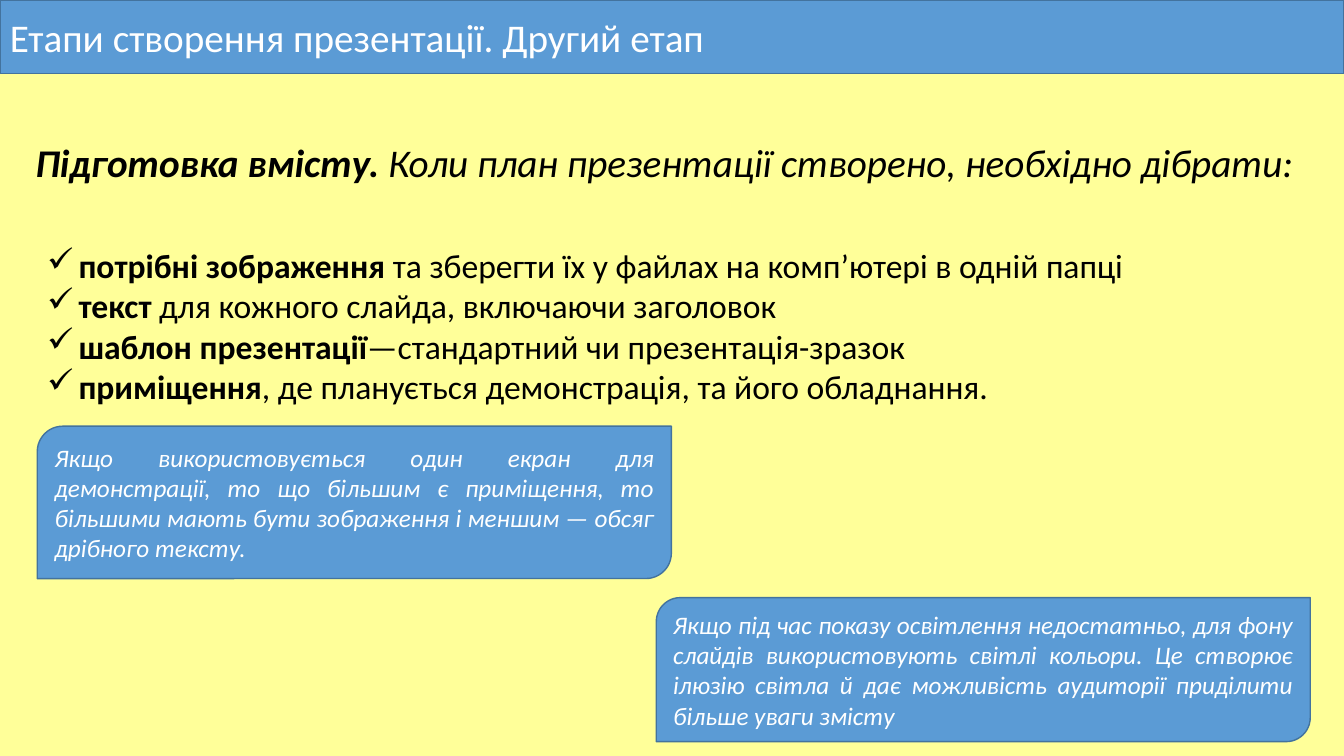
import pptx
import pptx.dml.color
import pptx.enum.shapes
import pptx.enum.text
import pptx.oxml.ns
import pptx.util
import lxml.etree

Cm = pptx.util.Cm
Pt = pptx.util.Pt
Align = pptx.enum.text.PP_ALIGN
Anchor = pptx.enum.text.MSO_ANCHOR
Kind = pptx.enum.shapes.MSO_SHAPE

BLUE, EDGE, CREAM, WHITE, BLACK = "5B9BD5", "43739E", "FFFF99", "FFFFFF", "000000"
HEAD = {"size": Pt(28), "name": "Calibri"}
LEAD = {**HEAD, "italic": True}
ITEM = {"size": Pt(24), "name": "Calibri"}
NOTE = {"size": Pt(18), "name": "Calibri", "italic": True}

ITEMS = [
    ("потрібні зображення ", "та зберегти їх у файлах на комп’ютері в одній папці"),
    ("текст", " для кожного слайда, включаючи заголовок"),
    ("шаблон презентації", "—стандартний чи презентація-зразок"),
    ("приміщення", ", де планується демонстрація, та його обладнання."),
]
NOTES = [
    ((0.94, 10.74, 15.98, 3.84),
     "Якщо використовується один екран для демонстрації, то що більшим є "
     "приміщення, то більшими мають бути зображення і меншим — обсяг дрібного тексту."),
    ((16.54, 15.06, 16.48, 3.63),
     "Якщо під час показу освітлення недостатньо, для фону слайдів використовують "
     "світлі кольори. Це створює ілюзію світла й дає можливість аудиторії "
     "приділити більше уваги змісту"),
]


def apply(item, form):
    """Set every attribute named in the format dict."""
    for key, value in form.items():
        setattr(item, key, value)


def paint(fmt, tone):
    """Give a fill a solid colour from a hex string."""
    fmt.solid()
    fmt.fore_color.rgb = pptx.dml.color.RGBColor.from_string(tone)


def write(para, text, form, tone, bold=False):
    """Add one formatted run to a paragraph."""
    run = para.add_run()
    run.text = text
    apply(run.font, {**form, "bold": bold})
    paint(run.font.fill, tone)


def add_panel(slide, kind, box, text, form, align):
    """Add a blue shape holding one white paragraph."""
    panel = slide.shapes.add_shape(kind, *map(Cm, box))
    panel.shadow.inherit = False
    paint(panel.fill, BLUE)
    paint(panel.line.fill, EDGE)
    panel.line.width = Pt(1)
    apply(panel.text_frame, {"word_wrap": True, "vertical_anchor": Anchor.MIDDLE})
    para = panel.text_frame.paragraphs[0]
    para.alignment = align
    write(para, text, form, WHITE)


def add_text(slide, box, rows, form, anchor):
    """Add a text box of bold and plain pairs and return its paragraphs."""
    frame = slide.shapes.add_textbox(*map(Cm, box)).text_frame
    apply(frame, {"word_wrap": True, "vertical_anchor": anchor})
    for index, (key, rest) in enumerate(rows):
        para = frame.add_paragraph() if index else frame.paragraphs[0]
        write(para, key, form, BLACK, True)
        write(para, rest, form, BLACK)
    return frame.paragraphs


def add_tick(para):
    """Give a paragraph a tick bullet with a hanging indent."""
    props = para._p.get_or_add_pPr()
    props.set("marL", str(Cm(0.79)))
    props.set("indent", str(-Cm(0.79)))
    tick = lxml.etree.SubElement(props, pptx.oxml.ns.qn("a:buChar"))
    tick.set("char", "✓")


def main():
    """Build the slide and save it."""
    deck = pptx.Presentation()
    apply(deck, {"slide_width": Cm(33.87), "slide_height": Cm(19.05)})
    slide = deck.slides.add_slide(deck.slide_layouts[6])
    paint(slide.background.fill, CREAM)

    add_panel(slide, Kind.RECTANGLE, (0, 0, 33.87, 1.85),
              "Етапи створення презентації. Другий етап", HEAD, Align.LEFT)
    lead = [("Підготовка вмісту. ", "Коли план презентації створено, необхідно дібрати:")]
    for para in add_text(slide, (0.64, 2.59, 32.59, 3.12), lead, LEAD, Anchor.MIDDLE):
        apply(para, {"alignment": Align.JUSTIFY, "line_spacing": 0.9})
    for para in add_text(slide, (0.94, 6.05, 30.3, 4.37), ITEMS, ITEM, Anchor.TOP):
        add_tick(para)
    for box, text in NOTES:
        add_panel(slide, Kind.ROUND_2_DIAG_RECTANGLE, box, text, NOTE, Align.JUSTIFY)

    deck.save("out.pptx")


if __name__ == "__main__":
    main()
